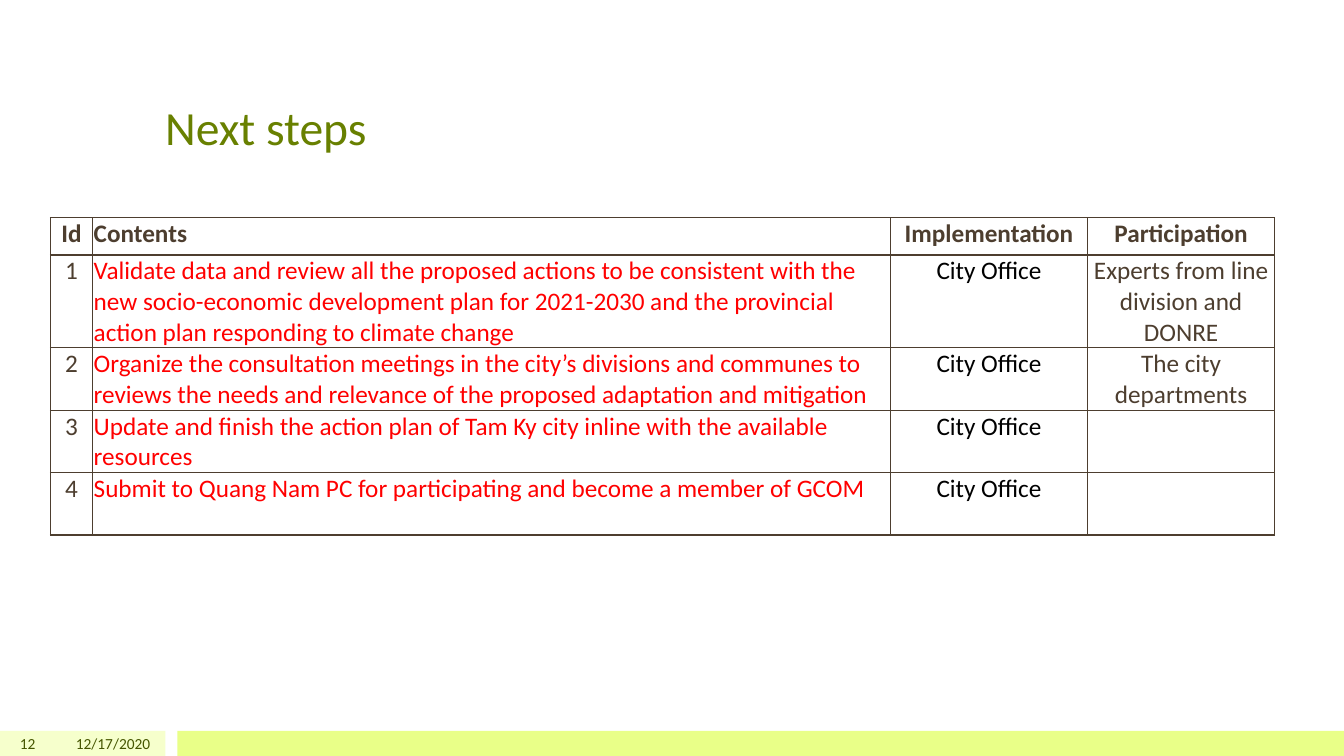
from lxml import etree
from pptx import Presentation
from pptx.dml.color import RGBColor
from pptx.enum.shapes import MSO_SHAPE
from pptx.enum.text import MSO_ANCHOR, PP_ALIGN
from pptx.oxml.ns import qn
from pptx.util import Inches, Pt

RECT = MSO_SHAPE.RECTANGLE
LEFT, CENTER, RIGHT = PP_ALIGN.LEFT, PP_ALIGN.CENTER, PP_ALIGN.RIGHT
TOP, MIDDLE, BOTTOM = MSO_ANCHOR.TOP, MSO_ANCHOR.MIDDLE, MSO_ANCHOR.BOTTOM

PALE = RGBColor(0xF6, 0xFF, 0xCC)
LIME = RGBColor(0xE9, 0xFF, 0x88)
GREEN = RGBColor(0x68, 0x80, 0x00)
OLIVE = RGBColor(0x45, 0x55, 0x00)
BROWN = RGBColor(0x4D, 0x3E, 0x2F)
RED = RGBColor(0xFF, 0x00, 0x00)
BLACK = RGBColor(0x00, 0x00, 0x00)

WIDTHS = [0.42, 7.91, 1.96, 1.85]
HEIGHTS = [0.37, 0.92, 0.62, 0.62, 0.62]
ALIGNS = [CENTER, LEFT, CENTER, CENTER]
COLORS = [BROWN, RED, BLACK, BROWN]
HEADER = ["Id", "Contents", "Implementation", "Participation"]
STEPS = [
    ("Validate data and review all the proposed actions to be consistent "
     "with the new socio-economic development plan for 2021-2030 and the "
     "provincial action plan responding to climate change",
     "Experts from line division and DONRE"),
    ("Organize the consultation meetings in the city’s divisions and "
     "communes to reviews the needs and relevance of the proposed "
     "adaptation and mitigation",
     "The city departments"),
    ("Update and finish the action plan of Tam Ky city inline with the "
     "available resources", ""),
    ("Submit to Quang Nam PC for participating and become a member of GCOM",
     ""),
]


def set_all(target, values):
    for name, value in values.items():
        setattr(target, name, value)


def write(frame, text, size, color, align, bold=False):
    para = frame.paragraphs[0]
    para.alignment = align
    if text:
        run = para.add_run()
        run.text = text
        font = run.font
    else:
        font = para.font
    set_all(font, {"name": "Calibri", "size": Pt(size), "bold": bold})
    font.color.rgb = color


def add_bar(slide, left, width, color):
    bar = slide.shapes.add_shape(
        RECT, Inches(left), Inches(7.25), Inches(width), Inches(0.25))
    bar.shadow.inherit = False
    bar.fill.solid()
    bar.fill.fore_color.rgb = color
    bar.line.fill.background()


def add_label(slide, box, text, size, color, align, anchor):
    label = slide.shapes.add_textbox(*map(Inches, box))
    frame = label.text_frame
    set_all(frame, {"word_wrap": True, "vertical_anchor": anchor})
    write(frame, text, size, color, align)


def add_border(cell):
    props = cell._tc.get_or_add_tcPr()
    for side in ("lnL", "lnR", "lnT", "lnB"):
        line = etree.SubElement(props, qn("a:" + side), w=str(Pt(1)))
        fill = etree.SubElement(line, qn("a:solidFill"))
        etree.SubElement(fill, qn("a:srgbClr"), val=str(BROWN))


def add_grid(slide, rows):
    shape = slide.shapes.add_table(
        len(rows), len(WIDTHS), Inches(0.5), Inches(2.16),
        Inches(sum(WIDTHS)), Inches(sum(HEIGHTS)))
    table = shape.table
    set_all(table, {"first_row": False, "horz_banding": False})
    for column, width in zip(table.columns, WIDTHS):
        column.width = Inches(width)
    for row, height in zip(table.rows, HEIGHTS):
        row.height = Inches(height)
    inset = Inches(0.01)
    for r, texts in enumerate(rows):
        for c, text in enumerate(texts):
            cell = table.cell(r, c)
            set_all(cell, {"margin_left": inset, "margin_right": inset,
                           "margin_top": inset, "margin_bottom": 0,
                           "vertical_anchor": TOP})
            add_border(cell)
            cell.fill.background()
            color = COLORS[c] if r else BROWN
            write(cell.text_frame, text, 18, color, ALIGNS[c], r == 0)


def main():
    deck = Presentation()
    set_all(deck, {"slide_width": Inches(13.33), "slide_height": Inches(7.5)})
    slide = deck.slides.add_slide(deck.slide_layouts[6])
    add_bar(slide, 0, 1.64, PALE)
    add_bar(slide, 1.76, 11.57, LIME)
    add_label(slide, (1.54, 0.3, 10.25, 1.29), "Next steps", 34, GREEN,
              LEFT, BOTTOM)
    add_label(slide, (0, 7.25, 0.45, 0.25), "12", 11, OLIVE, RIGHT, MIDDLE)
    add_label(slide, (0.5, 7.25, 1.09, 0.25), "12/17/2020", 11, OLIVE,
              RIGHT, MIDDLE)
    rows = [HEADER] + [[str(i), task, "City Office", guests]
                       for i, (task, guests) in enumerate(STEPS, 1)]
    add_grid(slide, rows)
    deck.save("out.pptx")


if __name__ == "__main__":
    main()
